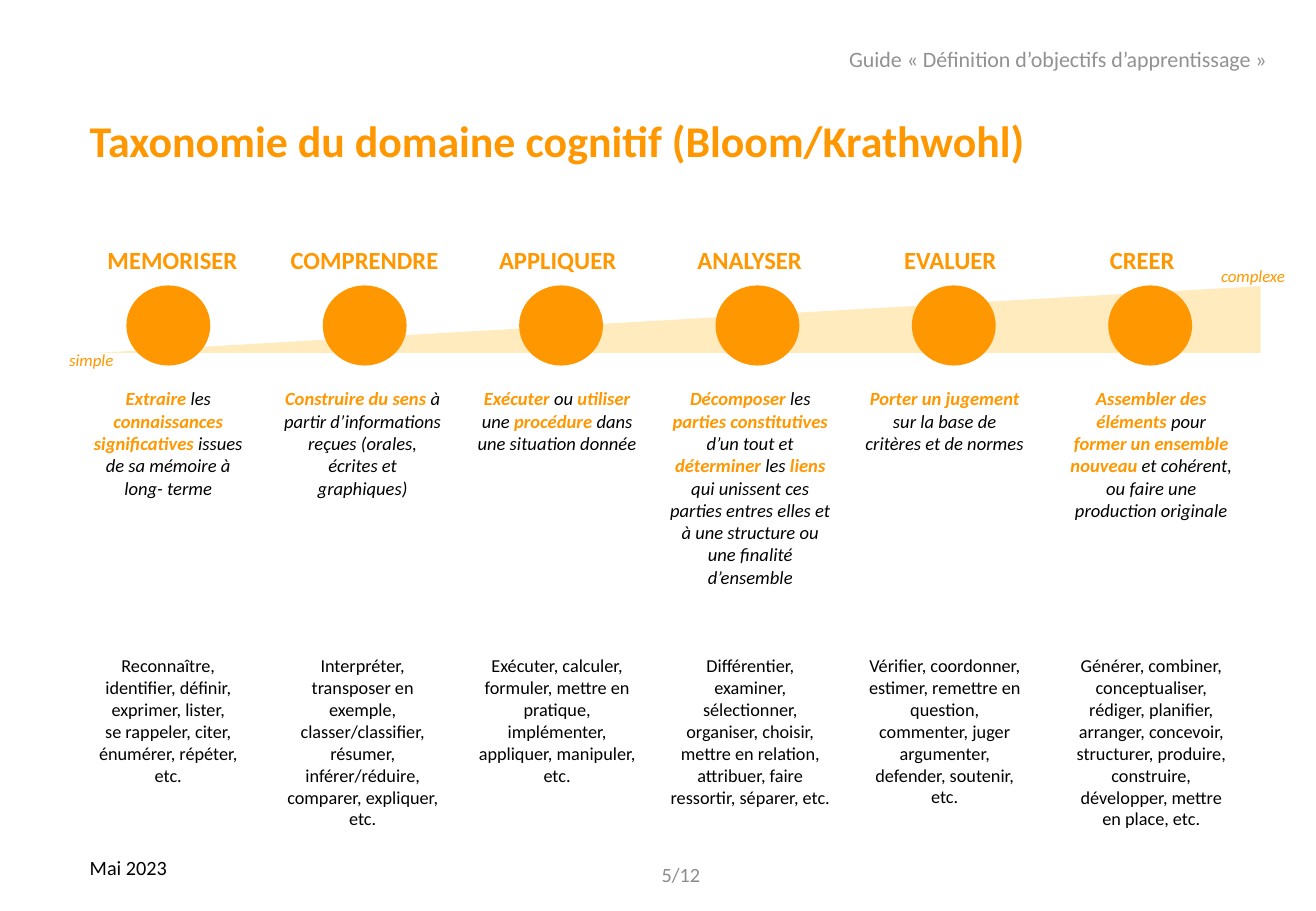
from pptx import Presentation
from pptx.dml.color import RGBColor
from pptx.enum.shapes import MSO_SHAPE
from pptx.enum.text import MSO_ANCHOR, PP_ALIGN
from pptx.util import Inches, Pt

TRIANGLE = MSO_SHAPE.ISOSCELES_TRIANGLE
CIRCLE = MSO_SHAPE.FLOWCHART_CONNECTOR
TOP, MIDDLE, BOTTOM = MSO_ANCHOR.TOP, MSO_ANCHOR.MIDDLE, MSO_ANCHOR.BOTTOM
LEFT, CENTER, RIGHT = PP_ALIGN.LEFT, PP_ALIGN.CENTER, PP_ALIGN.RIGHT

FONT = "Calibri"
COLORS = {
    "orange": "FF9700",
    "wedge": "FFEBBD",
    "black": "000000",
    "header": "929293",
    "page": "8C8C8C",
}

# Definition pieces alternate between emphasised and plain.
LEVELS = [
    {
        "name": "MEMORISER", "name_left": 0.46, "text_left": 0.62, "gap_lines": 7,
        "definition": ["Extraire", " les ", "connaissances significatives",
                       " issues de sa mémoire à long- terme"],
        "verbs": ["Reconnaître, identifier, définir, exprimer, lister,",
                  "se rappeler, citer, énumérer, répéter, etc."],
    },
    {
        "name": "COMPRENDRE", "name_left": 2.04, "text_left": 2.22, "gap_lines": 7,
        "definition": ["Construire du sens",
                       " à partir d’informations reçues (orales, écrites et graphiques)"],
        "verbs": ["Interpréter, transposer en exemple, classer/classifier, résumer, "
                  "inférer/réduire, comparer, expliquer, etc."],
    },
    {
        "name": "APPLIQUER", "name_left": 3.63, "text_left": 3.82, "gap_lines": 9,
        "definition": ["Exécuter", " ou ", "utiliser", " une ", "procédure",
                       " dans une situation donnée"],
        "verbs": ["Exécuter, calculer, formuler, mettre en pratique, implémenter, "
                  "appliquer, manipuler, etc."],
    },
    {
        "name": "ANALYSER", "name_left": 5.21, "text_left": 5.41, "gap_lines": 3,
        "definition": ["Décomposer", " les ", "parties constitutives", " d’un tout et ",
                       "déterminer", " les ", "liens",
                       " qui unissent ces parties entres elles et à une structure "
                       "ou une finalité d’ensemble"],
        "verbs": ["Différentier, examiner, sélectionner, organiser, choisir, "
                  "mettre en relation, attribuer, faire ressortir, séparer, etc."],
    },
    {
        "name": "EVALUER", "name_left": 6.86, "text_left": 7.01, "gap_lines": 9,
        "definition": ["Porter un jugement", " sur la base de critères et de normes"],
        "verbs": ["Vérifier, coordonner, estimer, remettre en question, commenter, "
                  "juger argumenter, defender, soutenir, etc."],
    },
    {
        "name": "CREER", "name_left": 8.44, "text_left": 8.71, "gap_lines": 6,
        "definition": ["Assembler des éléments", " pour ", "former un ensemble nouveau",
                       " et cohérent, ou faire une production originale"],
        "verbs": ["Générer, combiner, conceptualiser, rédiger, planifier, arranger, "
                  "concevoir, structurer, produire, construire, développer, "
                  "mettre en place, etc."],
    },
]

LABELS = [
    {"text": "Guide «\u00a0Définition d’objectifs d’apprentissage\u00a0»",
     "box": (6.89, 0.15, 4.47, 0.67), "size": 13, "color": "header", "anchor": MIDDLE},
    {"text": "Taxonomie du domaine cognitif (Bloom/Krathwohl)",
     "box": (0.64, 0.82, 9.92, 0.67), "size": 26, "color": "orange", "anchor": MIDDLE,
     "bold": True},
    {"text": "simple", "box": (0.47, 2.83, 1.21, 0.27), "size": 10, "color": "orange",
     "italic": True},
    {"text": "complexe", "box": (9.95, 2.14, 1.21, 0.27), "size": 10, "color": "orange",
     "italic": True},
    {"text": "5/12", "box": (5.32, 7, 0.54, 0.4), "size": 12, "color": "page",
     "anchor": MIDDLE, "align": RIGHT},
    {"text": "Mai 2023", "box": (0.64, 6.99, 1.18, 0.3), "size": 12, "color": "black"},
]

CIRCLE_FIRST, CIRCLE_LAST = 1.04, 9.12
VERB_SIZE = 10.8
VERB_LINE = 13.2


def rgb(name):
    return RGBColor.from_string(COLORS[name])


def add_frame(slide, box, anchor=TOP):
    frame = slide.shapes.add_textbox(*map(Inches, box)).text_frame
    frame.word_wrap = True
    frame.vertical_anchor = anchor
    return frame


def style(paragraph, size, color, align=LEFT, bold=False, italic=False):
    paragraph.alignment = align
    font = paragraph.font
    font.name, font.size = FONT, Pt(size)
    font.bold, font.italic = bold, italic
    font.color.rgb = rgb(color)


def add_label(slide, text, box, anchor=TOP, **look):
    paragraph = add_frame(slide, box, anchor).paragraphs[0]
    paragraph.text = text
    style(paragraph, **look)


def add_solid(slide, kind, box, color):
    shape = slide.shapes.add_shape(kind, *map(Inches, box))
    shape.shadow.inherit = False
    shape.fill.solid()
    shape.fill.fore_color.rgb = rgb(color)
    shape.line.fill.background()
    return shape


def add_description(slide, level):
    frame = add_frame(slide, (level["text_left"], 3.14, 1.53, 2.4))
    definition = frame.paragraphs[0]
    style(definition, 11, "black", CENTER, italic=True)
    for index, piece in enumerate(level["definition"]):
        run = definition.add_run()
        run.text = piece
        if index % 2 == 0:
            run.font.bold = True
            run.font.color.rgb = rgb("orange")
    for index, text in enumerate(level["verbs"]):
        verbs = frame.add_paragraph()
        verbs.text = text
        style(verbs, VERB_SIZE, "black", CENTER)
        if index == 0:
            verbs.space_before = Pt(level["gap_lines"] * VERB_LINE)


def main():
    presentation = Presentation()
    presentation.slide_width = Inches(10.83)
    presentation.slide_height = Inches(7.5)
    slide = presentation.slides.add_slide(presentation.slide_layouts[6])

    wedge = add_solid(slide, TRIANGLE, (5.31, -2.16, 0.55, 9.58), "wedge")
    wedge.adjustments[0] = 0
    wedge.rotation = 270

    circle_step = (CIRCLE_LAST - CIRCLE_FIRST) / (len(LEVELS) - 1)
    for index, level in enumerate(LEVELS):
        add_label(slide, level["name"], (level["name_left"], 1.58, 1.92, 0.73), BOTTOM,
                  size=14.6, color="orange", align=CENTER, bold=True)
        circle_left = CIRCLE_FIRST + index * circle_step
        add_solid(slide, CIRCLE, (circle_left, 2.35, 0.69, 0.66), "orange")
        add_description(slide, level)

    for label in LABELS:
        add_label(slide, **label)

    presentation.save("out.pptx")


if __name__ == "__main__":
    main()
